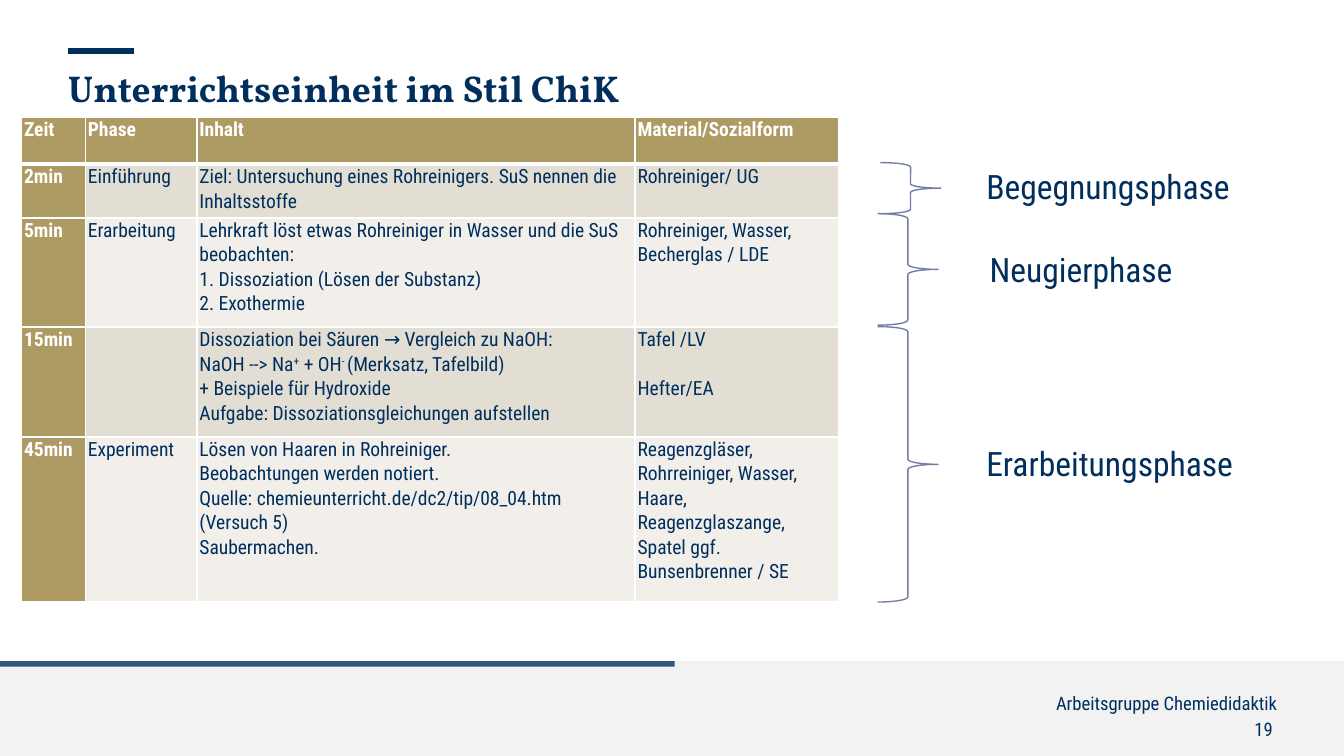
from lxml.etree import SubElement
from pptx import Presentation
from pptx.dml.color import RGBColor
from pptx.enum.shapes import MSO_CONNECTOR, MSO_SHAPE
from pptx.enum.text import PP_ALIGN
from pptx.oxml.ns import qn
from pptx.util import Inches, Pt

COLORS = {
    "navy": "002F5D", "white": "FFFFFF", "footer": "F2F2F2", "gold": "AE9A63",
    "sand": "E3DED3", "cream": "F2EFEA", "brace": "727FA3",
}
BODY_FONT = "Roboto Condensed"
GRID_COLUMNS, GRID_ROWS = 100, 56.25
TABLE_COLUMNS = [4.75, 8.3, 32.6, 15.2]
TABLE_ROWS = [3.5, 4, 8.15, 8.15, 12.3]
ION_EQUATION = [("NaOH --> Na", 0), ("+", 30), (" + OH", 0), ("- ", 30),
                ("(Merksatz, Tafelbild)", 0)]
LESSON = [
    [["Zeit"], ["Phase"], ["Inhalt"], ["Material/Sozialform"]],
    [["2min"], ["Einführung"],
     ["Ziel: Untersuchung eines Rohreinigers. SuS nennen die Inhaltsstoffe"],
     ["Rohreiniger/ UG"]],
    [["5min"], ["Erarbeitung"],
     ["Lehrkraft löst etwas Rohreiniger in Wasser und die SuS beobachten:",
      "1. Dissoziation (Lösen der Substanz)", "2. Exothermie"],
     ["Rohreiniger, Wasser, Becherglas / LDE"]],
    [["15min"], [],
     ["Dissoziation bei Säuren → Vergleich zu NaOH:", ION_EQUATION,
      "+ Beispiele für Hydroxide", "Aufgabe: Dissoziationsgleichungen aufstellen"],
     ["Tafel /LV", "Hefter/EA"]],
    [["45min"], ["Experiment"],
     ["Lösen von Haaren in Rohreiniger.", "Beobachtungen werden notiert.",
      "Quelle: chemieunterricht.de/dc2/tip/08_04.htm", "(Versuch 5)", "Saubermachen."],
     ["Reagenzgläser, Rohrreiniger, Wasser, Haare, Reagenzglaszange, "
      "Spatel ggf. Bunsenbrenner / SE"]],
]
PHASES = [
    ("Begegnungsphase", (65.5, 12.1, 4.5, 3.8), (72.4, 11.85)),
    ("Neugierphase", (65.3, 15.9, 4.5, 8.3), (72.65, 18.05)),
    ("Erarbeitungsphase", (65.3, 24.3, 4.5, 20.5), (72.4, 32.5)),
]


def units(*steps):
    """Turn grid steps into slide lengths."""
    return [Inches(step / 10) for step in steps]


def color(name):
    """Look up a colour by name."""
    return RGBColor.from_string(COLORS[name])


def add_run(paragraph, text, size, name="navy", font=BODY_FONT, bold=False, baseline=0):
    """Add one formatted run to a paragraph."""
    run = paragraph.add_run()
    run.text = text
    run.font.size, run.font.name, run.font.bold = Pt(size), font, bold
    run.font.color.rgb = color(name)
    if baseline:
        run.font._element.set("baseline", str(baseline * 1000))


def add_label(slide, box, text, size, inset=True, align=PP_ALIGN.LEFT, **style):
    """Add a one-line text box."""
    frame = slide.shapes.add_textbox(*units(*box)).text_frame
    frame.word_wrap = True
    if not inset:
        frame.margin_left = frame.margin_right = frame.margin_top = frame.margin_bottom = 0
    paragraph = frame.paragraphs[0]
    paragraph.alignment = align
    add_run(paragraph, text, size, **style)


def add_bar(slide, box, name, opacity=100):
    """Add a borderless filled bar."""
    shape = slide.shapes.add_shape(MSO_SHAPE.RECTANGLE, *units(*box))
    shape.shadow.inherit = False
    shape.fill.solid()
    shape.fill.fore_color.rgb = color(name)
    shape.line.fill.background()
    if opacity < 100:
        tint = shape._element.spPr.find(".//" + qn("a:srgbClr"))
        SubElement(tint, qn("a:alpha"), val=str(opacity * 1000))


def add_rule(slide, start, end):
    """Add the short line above the title."""
    rule = slide.shapes.add_connector(MSO_CONNECTOR.STRAIGHT, *units(*start, *end))
    rule.line.color.rgb = color("navy")
    rule.line.width = Pt(3.5)
    SubElement(rule._element.spPr, qn("a:effectLst"))


def add_brace(slide, box):
    """Add an outlined right brace."""
    shape = slide.shapes.add_shape(MSO_SHAPE.RIGHT_BRACE, *units(*box))
    shape.shadow.inherit = False
    shape.fill.background()
    shape.line.color.rgb = color("brace")
    shape.line.width = Pt(0.75)


def add_borders(cell, bottom):
    """Draw white borders round a cell."""
    properties = cell._tc.get_or_add_tcPr()
    for index, (side, width) in enumerate(zip("LRTB", (1, 1, 1, bottom))):
        line = SubElement(properties, qn("a:ln" + side), w=str(Pt(width)))
        fill = SubElement(line, qn("a:solidFill"))
        SubElement(fill, qn("a:srgbClr"), val=COLORS["white"])
        properties.remove(line)
        properties.insert(index, line)


def fill_cell(cell, lines, row, column):
    """Write and colour one table cell."""
    heading = row == 0 or column == 0
    cell.margin_left = cell.margin_right = Inches(0.02)
    cell.margin_top = cell.margin_bottom = 0
    cell.fill.solid()
    cell.fill.fore_color.rgb = color("gold" if heading else ("cream", "sand")[row % 2])
    add_borders(cell, 3 if row == 0 else 1)
    frame = cell.text_frame
    for index, line in enumerate(lines):
        paragraph = frame.add_paragraph() if index else frame.paragraphs[0]
        paragraph.line_spacing = 1.07
        if index and column == 3:
            paragraph.space_before = Pt(13)
        for text, baseline in [(line, 0)] if isinstance(line, str) else line:
            add_run(paragraph, text, 10.5, "white" if heading else "navy",
                    bold=heading, baseline=baseline)


def add_lesson_table(slide, left, top):
    """Add the lesson plan table."""
    box = units(left, top, sum(TABLE_COLUMNS), sum(TABLE_ROWS))
    table = slide.shapes.add_table(len(TABLE_ROWS), len(TABLE_COLUMNS), *box).table
    for column, width in zip(table.columns, units(*TABLE_COLUMNS)):
        column.width = width
    for row, height in zip(table.rows, units(*TABLE_ROWS)):
        row.height = height
    for row, cells in enumerate(LESSON):
        for column, lines in enumerate(cells):
            fill_cell(table.cell(row, column), lines, row, column)


def main():
    """Build and save the slide."""
    presentation = Presentation()
    presentation.slide_width, presentation.slide_height = units(GRID_COLUMNS, GRID_ROWS)
    slide = presentation.slides.add_slide(presentation.slide_layouts[6])
    add_bar(slide, (0, 49.2, GRID_COLUMNS, GRID_ROWS - 49.2), "footer")
    add_label(slide, (33.8, 51, 62.2, 1.6), "Arbeitsgruppe Chemiedidaktik", 10,
              align=PP_ALIGN.RIGHT)
    add_bar(slide, (0, 49.2, 50.2, 0.4), "navy", 80)
    add_label(slide, (38.5, 53.4, 56.2, 1.7), "19", 10, inset=False, align=PP_ALIGN.RIGHT)
    add_label(slide, (5.05, 4.85, 65, 7.2), "Unterrichtseinheit im Stil ChiK", 20,
              inset=False, font="Vollkorn", bold=True)
    add_rule(slide, (5.05, 3.8), (10, 3.8))
    add_lesson_table(slide, 1.6, 8.7)
    for name, brace, corner in PHASES:
        add_brace(slide, brace)
        add_label(slide, (*corner, 22.6, 4), name, 18)
    presentation.save("out.pptx")


if __name__ == "__main__":
    main()
